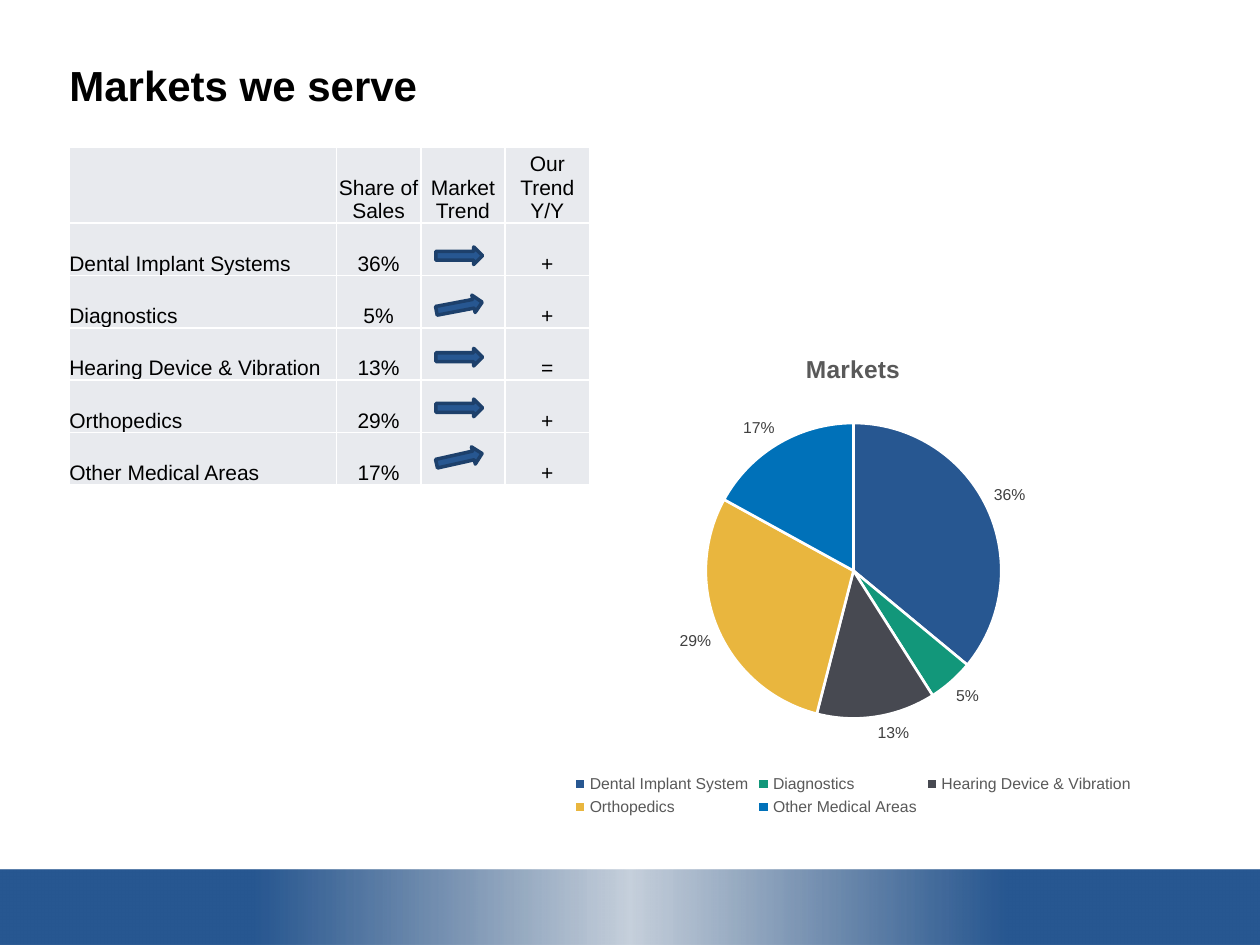
from lxml import etree
from pptx import Presentation
from pptx import util as u
from pptx.chart import data as chart_data
from pptx.dml import color
from pptx.enum import chart as charts, shapes, text
from pptx.oxml import ns, parse_xml

COLOURS = {
    "blue": "275791", "deep": "1F4674", "outline": "1D406B", "green": "12977A",
    "slate": "474951", "gold": "E9B63E", "sky": "0071B9", "cell": "E8EAEE",
    "black": "000000", "white": "FFFFFF", "grey": "595959", "label": "404040",
}
FONT = "Arial"
HEADINGS = ["", "Share of Sales", "Market Trend", "Our Trend Y/Y"]
MARKETS = [
    ("Dental Implant Systems", 36, "+", 0),
    ("Diagnostics", 5, "+", 349.3),
    ("Hearing Device & Vibration", 13, "=", 0),
    ("Orthopedics", 29, "+", 0),
    ("Other Medical Areas", 17, "+", 347.4),
]
SLICES = ["blue", "green", "slate", "gold", "sky"]


def rgb(name):
    """Return the named colour."""
    return color.RGBColor.from_string(COLOURS[name])


def set_font(font, size, colour, bold=False):
    """Style a font."""
    font.name, font.size, font.bold = FONT, u.Pt(size), bold
    font.color.rgb = rgb(colour)


def add_span(para, words, size, bold=False):
    """Add one run of black text to a paragraph."""
    span = para.add_run()
    span.text = words
    set_font(span.font, size, "black", bold)


def add_footer(page, left, top, width, height):
    """Draw the footer band, which fades towards its middle."""
    band = page.shapes.add_shape(shapes.MSO_SHAPE.RECTANGLE, left, top, width, height)
    band.shadow.inherit = False
    band.line.fill.background()
    stops = [(0, "blue", 100), (20, "blue", 100), (50, "deep", 25),
             (80, "blue", 100), (100, "blue", 100)]
    marks = "".join(
        f'<a:gs pos="{place * 1000}"><a:srgbClr val="{COLOURS[name]}">'
        f'<a:alpha val="{alpha * 1000}"/></a:srgbClr></a:gs>'
        for place, name, alpha in stops)
    gradient = parse_xml(
        f'<a:gradFill {ns.nsdecls("a")} rotWithShape="1"><a:gsLst>{marks}</a:gsLst>'
        '<a:lin ang="0" scaled="0"/></a:gradFill>')
    band.element.spPr.find(ns.qn("a:prstGeom")).addnext(gradient)


def add_title(page, left, top, width, height):
    """Write the slide title."""
    box = page.shapes.add_textbox(left, top, width, height)
    frame = box.text_frame
    frame.word_wrap = True
    frame.margin_left = frame.margin_right = frame.margin_top = frame.margin_bottom = 0
    para = frame.paragraphs[0]
    para.line_spacing = 0.9
    add_span(para, "Markets we serve", 24, True)


def add_borders(cell):
    """Draw white lines on all sides of a cell."""
    properties = cell._tc.get_or_add_tcPr()
    for side in ("lnL", "lnR", "lnT", "lnB"):
        line = etree.SubElement(properties, ns.qn(f"a:{side}"), w=str(u.Pt(1)))
        fill = etree.SubElement(line, ns.qn("a:solidFill"))
        etree.SubElement(fill, ns.qn("a:srgbClr"), val=COLOURS["white"])


def fill_cell(cell, words, centred):
    """Style a table cell and write its words."""
    add_borders(cell)
    cell.fill.solid()
    cell.fill.fore_color.rgb = rgb("cell")
    cell.margin_left = cell.margin_right = cell.margin_top = cell.margin_bottom = 0
    cell.vertical_anchor = text.MSO_ANCHOR.BOTTOM
    para = cell.text_frame.paragraphs[0]
    if centred:
        para.alignment = text.PP_ALIGN.CENTER
    if words:
        add_span(para, words, 12)


def add_market_table(page, left, top, width, height):
    """Lay out the table of markets."""
    rows = [HEADINGS] + [[name, f"{share}%", "", trend] for name, share, trend, _ in MARKETS]
    table = page.shapes.add_table(len(rows), len(HEADINGS), left, top, width, height).table
    narrow, header = u.Inches(0.67), u.Inches(0.55)
    for index, column in enumerate(table.columns):
        column.width = narrow if index else width - 3 * narrow
    for index, row in enumerate(table.rows):
        row.height = (height - header) // len(MARKETS) if index else header
    for row_index, row in enumerate(rows):
        for column_index, words in enumerate(row):
            fill_cell(table.cell(row_index, column_index), words, column_index > 0)


def add_trend_arrows(page, left, top, width, height):
    """Spread the market trend arrows evenly down the box."""
    arrow_height = u.Inches(0.14)
    step = (height - arrow_height) / (len(MARKETS) - 1)
    for index, (_, _, _, turn) in enumerate(MARKETS):
        arrow = page.shapes.add_shape(
            shapes.MSO_SHAPE.RIGHT_ARROW, left, int(top + index * step), width, arrow_height)
        arrow.rotation = turn
        arrow.shadow.inherit = False
        arrow.fill.solid()
        arrow.fill.fore_color.rgb = rgb("blue")
        arrow.line.color.rgb = rgb("outline")
        arrow.line.width = u.Pt(2)


def add_market_chart(page, left, top, width, height):
    """Draw the pie of market shares."""
    data = chart_data.CategoryChartData()
    data.categories = ["Dental Implant System"] + [market[0] for market in MARKETS[1:]]
    data.add_series("Series 1", [market[1] for market in MARKETS])
    chart = page.shapes.add_chart(
        charts.XL_CHART_TYPE.PIE, left, top, width, height, data).chart
    set_font(chart.font, 10, "black")
    chart.has_title = True
    span = chart.chart_title.text_frame.paragraphs[0].add_run()
    span.text = "Markets"
    set_font(span.font, 14, "grey", True)
    chart.has_legend = True
    chart.legend.position = charts.XL_LEGEND_POSITION.BOTTOM
    chart.legend.include_in_layout = False
    set_font(chart.legend.font, 9, "grey")
    plot = chart.plots[0]
    plot.vary_by_categories = True
    for index, name in enumerate(SLICES):
        form = plot.series[0].points[index].format
        form.fill.solid()
        form.fill.fore_color.rgb = rgb(name)
        form.line.color.rgb = rgb("white")
        form.line.width = u.Pt(1.5)
    labels = plot.series[0].data_labels
    set_font(labels.font, 9, "label")
    labels.number_format, labels.number_format_is_linked = "0%", False
    labels.show_percentage, labels.show_value = True, False
    labels.position = charts.XL_LABEL_POSITION.OUTSIDE_END


def main():
    """Build and save the slide."""
    deck = Presentation()
    deck.slide_width, deck.slide_height = u.Inches(10), u.Inches(7.5)
    page = deck.slides.add_slide(deck.slide_layouts[6])
    regions = [
        (add_footer, (0, 6.9, 10, 0.6)),
        (add_title, (0.55, 0.52, 8.89, 0.63)),
        (add_market_table, (0.55, 1.17, 4.13, 2.63)),
        (add_market_chart, (3.54, 2.64, 6.46, 3.88)),
        (add_trend_arrows, (3.46, 1.96, 0.37, 1.75)),
    ]
    for draw, box in regions:
        draw(page, *map(u.Inches, box))
    deck.save("out.pptx")


if __name__ == "__main__":
    main()
